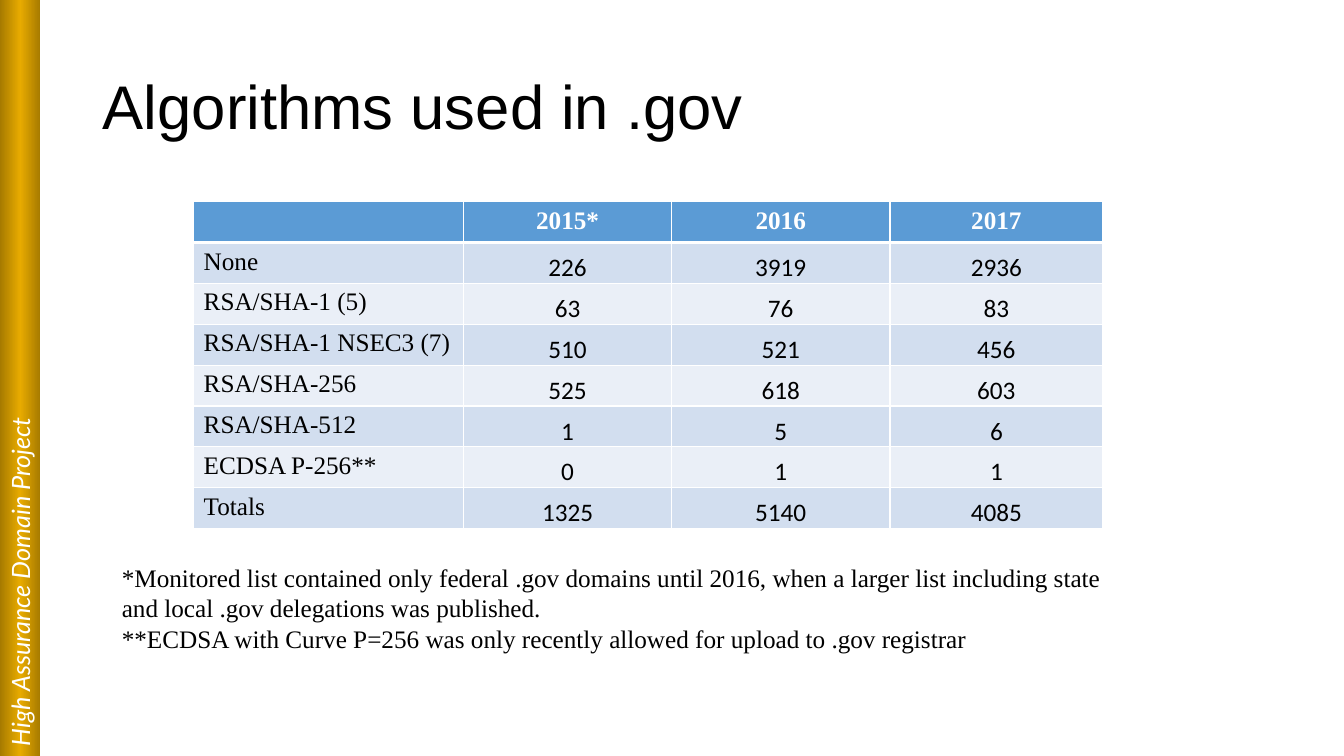
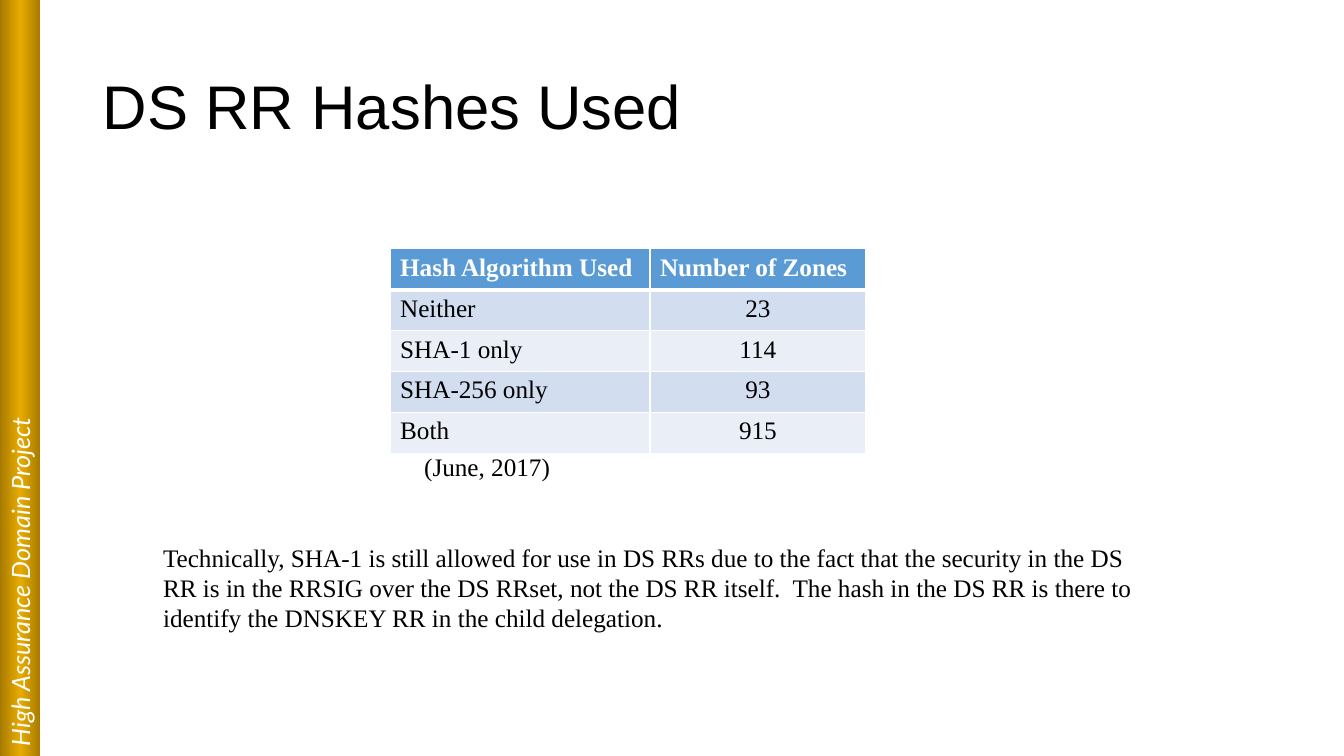
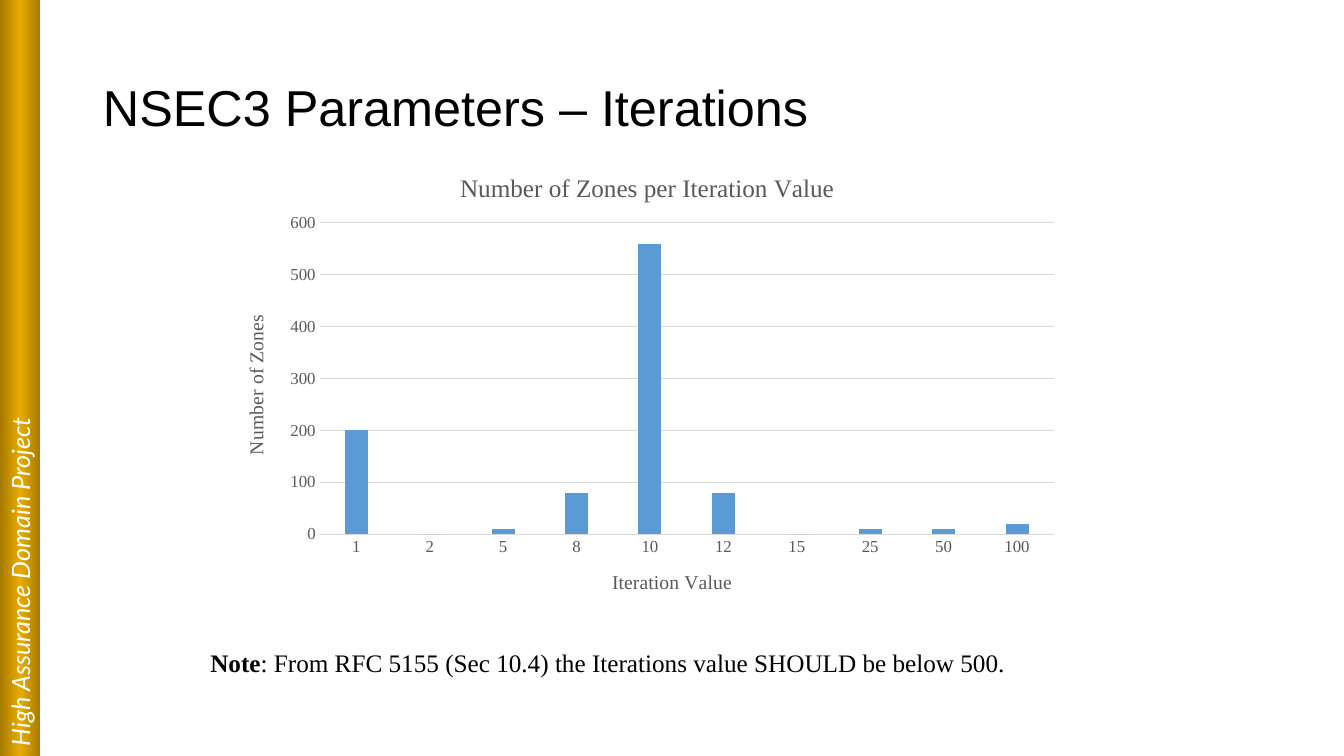
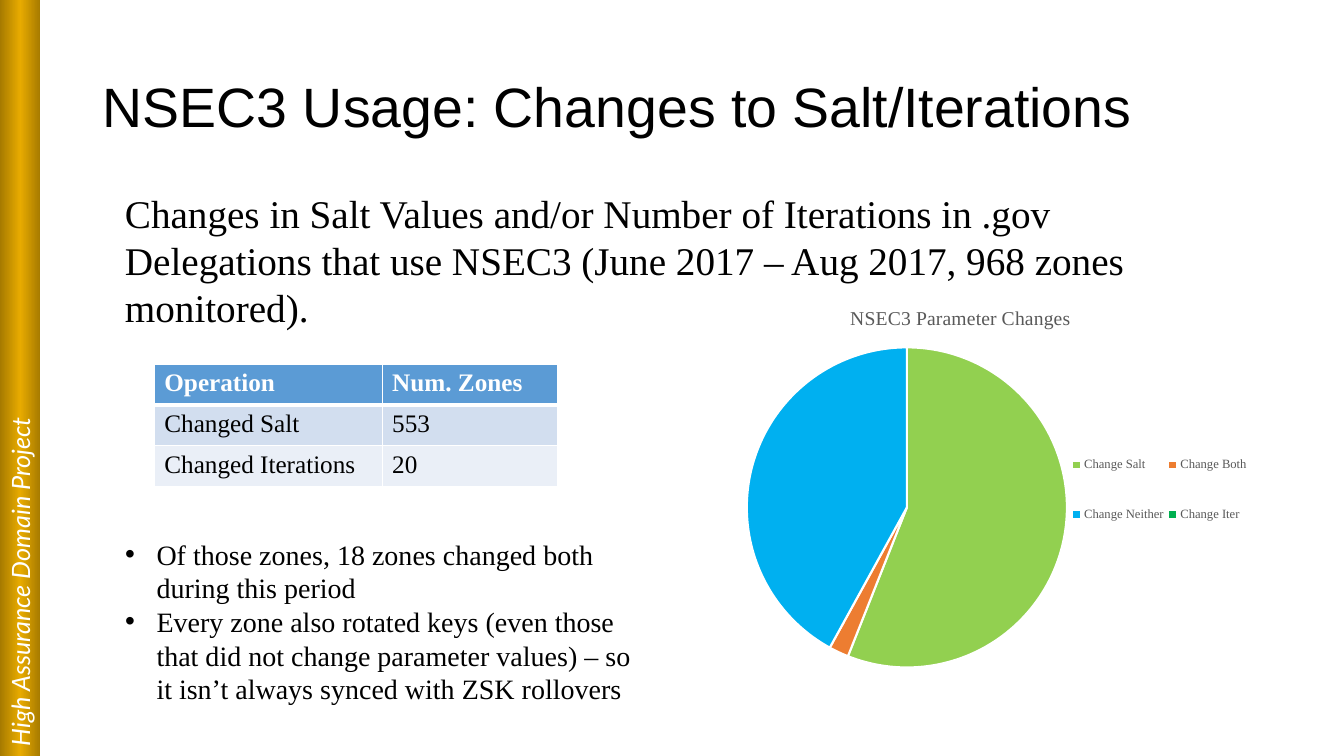
from copy import deepcopy
from dataclasses import dataclass

from lxml.etree import Element, SubElement
from pptx import Presentation
from pptx.chart.data import CategoryChartData
from pptx.dml.color import RGBColor
from pptx.enum.chart import XL_CHART_TYPE as ChartType
from pptx.enum.chart import XL_LEGEND_POSITION as LegendPosition
from pptx.enum.chart import XL_TICK_MARK as TickMark
from pptx.enum.shapes import MSO_SHAPE as Shape
from pptx.enum.text import MSO_ANCHOR as Anchor
from pptx.enum.text import MSO_AUTO_SIZE as AutoSize
from pptx.enum.text import PP_ALIGN as Align
from pptx.oxml.ns import qn
from pptx.util import Cm, Pt


@dataclass(frozen=True)
class Theme:
    black: RGBColor = RGBColor(0x00, 0x00, 0x00)
    white: RGBColor = RGBColor(0xFF, 0xFF, 0xFF)
    gold: RGBColor = RGBColor(0xE8, 0xAB, 0x00)
    dark_gold: RGBColor = RGBColor(0xA6, 0x7A, 0x00)
    blue: RGBColor = RGBColor(0x5B, 0x9B, 0xD5)
    row_dark: RGBColor = RGBColor(0xD2, 0xDE, 0xEF)
    row_light: RGBColor = RGBColor(0xEA, 0xEF, 0xF7)
    chart_text: RGBColor = RGBColor(0x59, 0x59, 0x59)
    grid: RGBColor = RGBColor(0xD9, 0xD9, 0xD9)
    slices: tuple = (
        RGBColor(0x92, 0xD0, 0x50),
        RGBColor(0xED, 0x7D, 0x31),
        RGBColor(0x00, 0xB0, 0xF0),
        RGBColor(0x00, 0xB0, 0x50),
    )
    title_font: str = "Arial"
    text_font: str = "Times New Roman"
    number_font: str = "Calibri"
    band_font: str = "Lato"
    title_size: float = 44
    lead_size: float = 28
    list_size: float = 20
    text_size: float = 18
    axis_title_size: float = 14
    tick_size: float = 12
    legend_size: float = 9


theme = Theme()


def write(frame, text, lead="", size=theme.text_size, font=theme.text_font,
          color=theme.black, bold=False, italic=False, align=None):
    """Fill a text frame, one paragraph per line; lead opens it in bold."""
    for index, line in enumerate(text.split("\n")):
        paragraph = frame.add_paragraph() if index else frame.paragraphs[0]
        paragraph.alignment = align
        parts = [(line, bold)]
        if lead and index == 0:
            parts.insert(0, (lead, True))
        for part, is_bold in parts:
            run = paragraph.add_run()
            run.text = part
            run.font.size = Pt(size)
            run.font.name = font
            run.font.color.rgb = color
            run.font.bold = is_bold
            run.font.italic = italic


def add_data_table(slide, left, top, widths, rows, header_align=None,
                   tight_numbers=False, **number_format):
    """Add a banded table; tight_numbers sets the figures on the cell floor."""
    row_height = 1.03
    table = slide.shapes.add_table(
        len(rows), len(widths), Cm(left), Cm(top),
        Cm(sum(widths)), Cm(row_height * len(rows))).table
    for column, width in zip(table.columns, widths):
        column.width = Cm(width)
    for r, row in enumerate(rows):
        table.rows[r].height = Cm(row_height)
        for c, text in enumerate(row):
            cell = table.cell(r, c)
            properties = cell._tc.get_or_add_tcPr()
            for side in "LRTB":
                under_header = (r, side) in ((0, "B"), (1, "T"))
                border = SubElement(properties, qn(f"a:ln{side}"),
                                    w=str(Pt(3 if under_header else 1)))
                SubElement(SubElement(border, qn("a:solidFill")),
                           qn("a:srgbClr"), val=str(theme.white))
            cell.fill.solid()
            if r == 0:
                cell.fill.fore_color.rgb = theme.blue
                text_format = dict(color=theme.white, bold=True, align=header_align)
            else:
                cell.fill.fore_color.rgb = theme.row_dark if r % 2 else theme.row_light
                text_format = number_format if c else {}
                if c and tight_numbers:
                    cell.vertical_anchor = Anchor.BOTTOM
                    cell.margin_left = cell.margin_right = cell.margin_top = Cm(0.03)
                    cell.margin_bottom = 0
            if text:
                write(cell.text_frame, text, **text_format)


deck = Presentation()
deck.slide_width, deck.slide_height = Cm(33.87), Cm(19.05)
master = deck.slide_master
content_layout, title_layout = deck.slide_layouts[1], deck.slide_layouts[5]

# Shared title place and slides
master_title = master.placeholders[0]
master_title.left, master_title.top = Cm(2.34), Cm(1.52)
master_title.width, master_title.height = Cm(27.99), Cm(2.49)

slides = []
for heading, size, layout in (
    ("Algorithms used in .gov", theme.title_size, title_layout),
    ("DS RR Hashes Used", theme.title_size, title_layout),
    ("NSEC3 Parameters – Iterations", 36, title_layout),
    ("NSEC3 Usage: Changes to Salt/Iterations", 39.6, content_layout),
):
    slide = deck.slides.add_slide(layout)
    title_frame = slide.shapes.title.text_frame
    write(title_frame, heading, size=size, font=theme.title_font, align=Align.LEFT)
    title_frame.paragraphs[0].line_spacing = 0.9
    title_frame.vertical_anchor = Anchor.MIDDLE
    title_frame.auto_size = AutoSize.NONE
    slides.append(slide)
algorithms, hashes, iterations, changes = slides

# Gold band, moved to the master so that every slide carries it
band_length, band_width = 19.05, 1.02
offset = (band_length - band_width) / 2
band = algorithms.shapes.add_shape(
    Shape.RECTANGLE, Cm(-offset), Cm(offset), Cm(band_length), Cm(band_width))
band.rotation = 270
band.shadow.inherit = False
band.line.fill.background()
band.fill.gradient()
band.fill.gradient_angle = 90
stop_list = band._element.spPr.find(".//" + qn("a:gsLst"))
stop_list.append(deepcopy(stop_list[0]))
for stop, position, color in zip(
        band.fill.gradient_stops, (0, 0.5, 1),
        (theme.dark_gold, theme.gold, theme.dark_gold)):
    stop.position = position
    stop.color.rgb = color
band.text_frame.vertical_anchor = Anchor.TOP
write(band.text_frame, "High Assurance Domain Project", font=theme.band_font,
      color=theme.white, italic=True, align=Align.LEFT)
master.shapes._spTree.append(band._element)

# Tables
add_data_table(algorithms, 4.88, 5.08, (6.81, 5.23, 5.51, 5.36), (
    ("", "2015*", "2016", "2017"),
    ("None", "226", "3919", "2936"),
    ("RSA/SHA-1 (5)", "63", "76", "83"),
    ("RSA/SHA-1 NSEC3 (7)", "510", "521", "456"),
    ("RSA/SHA-256", "525", "618", "603"),
    ("RSA/SHA-512", "1", "5", "6"),
    ("ECDSA P-256**", "0", "1", "1"),
    ("Totals", "1325", "5140", "4085"),
), header_align=Align.CENTER, tight_numbers=True,
    font=theme.number_font, align=Align.CENTER)

add_data_table(hashes, 9.83, 6.27, (6.55, 5.44), (
    ("Hash Algorithm Used", "Number of Zones"),
    ("Neither", "23"),
    ("SHA-1 only", "114"),
    ("SHA-256 only", "93"),
    ("Both", "915"),
), align=Align.CENTER)

add_data_table(changes, 3.89, 9.17, (5.74, 4.42), (
    ("Operation", "Num. Zones"),
    ("Changed Salt", "553"),
    ("Changed Iterations", "20"),
))

# Running text
for slide, box, lead, text, size in (
    (algorithms, (2.82, 14.05, 25.83, 2.57), "",
     "*Monitored list contained only federal .gov domains until 2016, when a larger "
     "list including state and local .gov delegations was published.\n"
     "**ECDSA with Curve P=256 was only recently allowed for upload to .gov registrar",
     theme.text_size),
    (hashes, (10.44, 11.25, 3.78, 1.02), "", "(June, 2017)", theme.text_size),
    (hashes, (3.86, 13.54, 24.94, 2.57), "",
     "Technically, SHA-1 is still allowed for use in DS RRs due to the fact that the "
     "security in the DS RR is in the RRSIG over the DS RRset, not the DS RR itself.  "
     "The hash in the DS RR is there to identify the DNSKEY RR in the child delegation.",
     theme.text_size),
    (iterations, (5.05, 16.18, 22.53, 1.02), "Note",
     ": From RFC 5155 (Sec 10.4) the Iterations value SHOULD be below 500.",
     theme.text_size),
    (changes, (2.9, 4.65, 28.14, 3.84), "",
     "Changes in Salt Values and/or Number of Iterations in .gov Delegations that use "
     "NSEC3 (June 2017 – Aug 2017, 968 zones monitored).", theme.lead_size),
):
    frame = slide.shapes.add_textbox(*map(Cm, box)).text_frame
    frame.word_wrap = True
    write(frame, text, lead=lead, size=size)

# Findings list
findings = changes.placeholders[1]
findings.left, findings.top = Cm(2.9), Cm(13.41)
findings.width, findings.height = Cm(13.54), Cm(4.52)
findings.text_frame.auto_size = AutoSize.NONE
write(findings.text_frame,
      "Of those zones, 18 zones changed both during this period\n"
      "Every zone also rotated keys (even those that did not change parameter values) "
      "– so it isn’t always synced with ZSK rollovers", size=theme.list_size)
for paragraph in findings.text_frame.paragraphs:
    paragraph.space_before = 0
    properties = paragraph._p.get_or_add_pPr()
    properties.set("marL", str(Cm(0.79)))
    properties.set("indent", str(-Cm(0.79)))

# Charts
charts = []
for slide, kind, box, heading, size, categories, values in (
    (iterations, ChartType.COLUMN_CLUSTERED, (5.59, 3.86, 21.44, 11.71),
     "Number of Zones per Iteration Value", theme.text_size,
     ("1", "2", "5", "8", "10", "12", "15", "25", "50", "100"),
     (200, 0, 10, 80, 560, 80, 0, 10, 10, 20)),
    (changes, ChartType.PIE, (16.71, 7.26, 14.99, 9.96),
     "NSEC3 Parameter Changes", theme.axis_title_size,
     ("Change Salt", "Change Both", "Change Neither", "Change Iter"),
     (56, 2, 42, 0)),
):
    data = CategoryChartData()
    data.categories = categories
    data.add_series("Zones", values)
    chart = slide.shapes.add_chart(kind, *map(Cm, box), data).chart
    chart.font.name = theme.text_font
    chart.font.size = Pt(theme.tick_size)
    chart.font.color.rgb = theme.chart_text
    chart.has_title = True
    chart.chart_title.include_in_layout = False
    write(chart.chart_title.text_frame, heading, size=size, color=theme.chart_text)
    charts.append(chart)
zones_chart, changes_chart = charts

zones_chart.has_legend = False
bars = zones_chart.plots[0]
bars.gap_width, bars.overlap, bars.vary_by_categories = 219, -27, False
bars.series[0].format.fill.solid()
bars.series[0].format.fill.fore_color.rgb = theme.blue
value_axis, category_axis = zones_chart.value_axis, zones_chart.category_axis
for axis, label in ((value_axis, "Number of Zones"), (category_axis, "Iteration Value")):
    axis.has_title = True
    write(axis.axis_title.text_frame, label, size=theme.axis_title_size,
          color=theme.chart_text)
    axis.major_tick_mark = axis.minor_tick_mark = TickMark.NONE
value_axis.minimum_scale, value_axis.maximum_scale, value_axis.major_unit = 0, 600, 100
value_axis.format.line.fill.background()
for line in (value_axis.major_gridlines.format.line, category_axis.format.line):
    line.color.rgb = theme.grid
    line.width = Pt(0.75)

pie = changes_chart.plots[0]
pie.vary_by_categories = True
for index, color in enumerate(theme.slices):
    point_format = pie.series[0].points[index].format
    point_format.fill.solid()
    point_format.fill.fore_color.rgb = color
    point_format.line.color.rgb = theme.white
    point_format.line.width = Pt(1.5)
changes_chart.has_legend = True
legend = changes_chart.legend
legend.position = LegendPosition.RIGHT
legend.include_in_layout = False
legend.font.name = theme.text_font
legend.font.size = Pt(theme.legend_size)
legend.font.color.rgb = theme.chart_text

# Fixed places inside the charts, as fractions of the chart area
for chart, part, index, fractions in (
    (zones_chart, "c:plotArea", 0, (0.115, 0.15, 0.863, 0.67)),
    (changes_chart, "c:plotArea", 0, (0.14, 0.15, 0.54, 0.81)),
    (changes_chart, "c:legend", 1, (0.68, 0.34, 0.31, 0.34)),
):
    parent = chart._chartSpace.find(".//" + qn(part))
    for automatic in parent.findall(qn("c:layout")):
        parent.remove(automatic)
    layout = Element(qn("c:layout"))
    manual = SubElement(layout, qn("c:manualLayout"))
    if part == "c:plotArea":
        SubElement(manual, qn("c:layoutTarget"), val="inner")
    for mode in ("xMode", "yMode"):
        SubElement(manual, qn(f"c:{mode}"), val="edge")
    for key, fraction in zip("xywh", fractions):
        SubElement(manual, qn(f"c:{key}"), val=str(fraction))
    parent.insert(index, layout)

deck.save("out.pptx")
